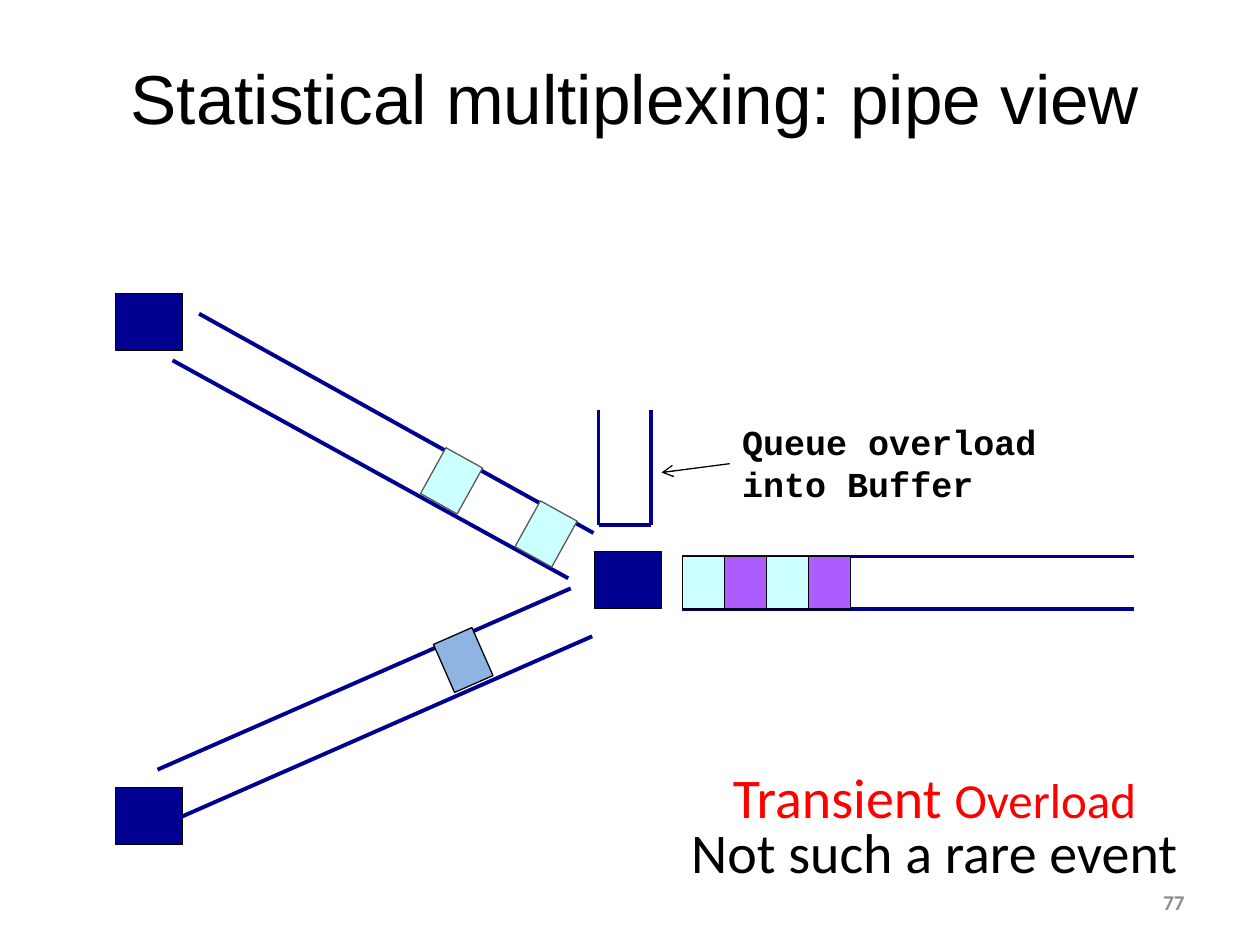
"""Build the slide that shows statistical multiplexing as pipes, on a grid of 1/12 inch cells."""
from dataclasses import dataclass

from lxml.etree import SubElement
from pptx import Presentation
from pptx.dml.color import RGBColor
from pptx.enum.shapes import MSO_CONNECTOR as Connector, MSO_SHAPE as Preset
from pptx.enum.text import MSO_ANCHOR as Anchor, PP_ALIGN as Align
from pptx.oxml.ns import qn
from pptx.util import Emu, Inches, Pt

CELL = Inches(1) / 12
NAVY = RGBColor(0x00, 0x00, 0x90)
CYAN = RGBColor(0xCC, 0xFF, 0xFF)
PURPLE = RGBColor(0xAD, 0x5C, 0xFF)
BLUE = RGBColor(0x8E, 0xB4, 0xE3)
BLACK = RGBColor(0x00, 0x00, 0x00)
RED = RGBColor(0xFF, 0x00, 0x00)
SLATE = RGBColor(0x59, 0x59, 0x59)
GREY = RGBColor(0x8C, 0x8C, 0x8C)
NODE_SIZE = (6.4, 5.4)
PACKET_SIZE = (4, 5)


@dataclass(frozen=True)
class Block:
    """A node or packet at a column and row of the grid."""
    column: float
    row: float
    size: tuple[float, float]
    fill: RGBColor
    outline: RGBColor = BLACK
    rotation: float = 0


@dataclass(frozen=True)
class Wall:
    """A straight line between two grid points."""
    start: tuple[float, float]
    end: tuple[float, float]
    color: RGBColor = NAVY
    width: float = 2.25
    arrow: bool = False


@dataclass(frozen=True)
class Label:
    """A text area with lines of (text, size) runs; colours go with the runs."""
    area: tuple[float, float, float, float]
    lines: tuple[tuple[tuple[str, float], ...], ...]
    font: str = "Calibri"
    color: RGBColor = BLACK
    bold: bool = False
    align: Align = Align.CENTER
    anchor: Anchor = Anchor.TOP
    wrap: bool = True


def cells(*counts: float) -> list[Emu]:
    """Turn counts of grid cells into lengths."""
    return [Emu(round(count * CELL)) for count in counts]


def apply_format(target: object, values: dict) -> None:
    """Set each named attribute of the target."""
    for name, value in values.items():
        setattr(target, name, value)


def draw_block(slide, block: Block) -> None:
    """Draw a filled rectangle."""
    box = slide.shapes.add_shape(Preset.RECTANGLE, *cells(block.column, block.row, *block.size))
    box.shadow.inherit = False
    box.rotation = block.rotation
    box.fill.solid()
    box.fill.fore_color.rgb = block.fill
    box.line.color.rgb = block.outline
    box.line.width = Pt(0.75)


def draw_wall(slide, wall: Wall) -> None:
    """Draw a line, with an arrowhead at its end if asked."""
    stroke = slide.shapes.add_connector(Connector.STRAIGHT, *cells(*wall.start, *wall.end))
    stroke.line.color.rgb = wall.color
    stroke.line.width = Pt(wall.width)
    if wall.arrow:
        SubElement(stroke.line._get_or_add_ln(), qn("a:tailEnd"), type="arrow")
    SubElement(stroke._element.spPr, qn("a:effectLst"))


def draw_label(slide, label: Label) -> None:
    """Write the lines of a label."""
    frame = slide.shapes.add_textbox(*cells(*label.area)).text_frame
    apply_format(frame, {"word_wrap": label.wrap, "vertical_anchor": label.anchor})
    for index, line in enumerate(label.lines):
        paragraph = frame.add_paragraph() if index else frame.paragraphs[0]
        paragraph.alignment = label.align
        for text, size in line:
            run = paragraph.add_run()
            run.text = text
            apply_format(run.font, {"name": label.font, "size": Pt(size), "bold": label.bold})
            run.font.color.rgb = label.color


NODES = [Block(column, row, NODE_SIZE, NAVY)
         for column, row in ((56.6, 52.55), (11, 27.95), (11, 75))]
UPPER_PIPE = [Wall((18.96, 29.88), (56.52, 50.76)), Wall((16.44, 34.32), (54.12, 55.08))]
LOWER_PIPE = [Wall((15, 73.3), (54.36, 56.04)), Wall((17.04, 77.9), (56.4, 60.6))]
BUFFER = [Wall((57, 39), (57, 50)), Wall((62, 39), (62, 50)), Wall((57, 50), (62, 50))]
OUTPUT_PIPE = [Wall((65, row), (108, row)) for row in (53, 58)]
POINTER = Wall((69.5, 44.16), (63, 45), BLACK, 0.75, True)
UPPER_PACKETS = [Block(column, row, PACKET_SIZE, CYAN, SLATE, 29)
                 for column, row in ((50, 48.36), (41, 43.3))]
LOWER_PACKET = Block(42.12, 60.36, PACKET_SIZE, BLUE, rotation=336.3)
OUTPUT_PACKETS = [Block(65 + PACKET_SIZE[0] * slot, 53, PACKET_SIZE, fill)
                  for slot, fill in enumerate((CYAN, PURPLE) * 2)]
LABELS = [
    Label((6, 1.56, 109, 15.36), ((("Statistical multiplexing: pipe view", 39.6),),),
          font="Arial", anchor=Anchor.MIDDLE),
    Label((61, 72, 56, 7.7), ((("Transient ", 32), ("Overload", 28)),), color=RED),
    Label((61, 77.3, 56, 7.7), ((("Not such a rare event", 32),),)),
    Label((69.5, 39.5, 30.7, 9.2), ((("Queue overload", 20),), (("into Buffer", 20),)),
          font="Courier New", bold=True, align=Align.LEFT, wrap=False),
    Label((86, 83.5, 28, 4.8), ((("77", 12),),), color=GREY, bold=True,
          align=Align.RIGHT, anchor=Anchor.MIDDLE),
]


def main() -> None:
    """Draw the parts from back to front and save the deck."""
    deck = Presentation()
    apply_format(deck, {"slide_width": Inches(10), "slide_height": Inches(7.5)})
    slide = deck.slides.add_slide(deck.slide_layouts[6])
    for node in NODES:
        draw_block(slide, node)
    for wall in (*UPPER_PIPE, *LOWER_PIPE, *BUFFER, *OUTPUT_PIPE, POINTER):
        draw_wall(slide, wall)
    for packet in (*UPPER_PACKETS, LOWER_PACKET, *OUTPUT_PACKETS):
        draw_block(slide, packet)
    for label in LABELS:
        draw_label(slide, label)
    deck.save("out.pptx")


if __name__ == "__main__":
    main()
